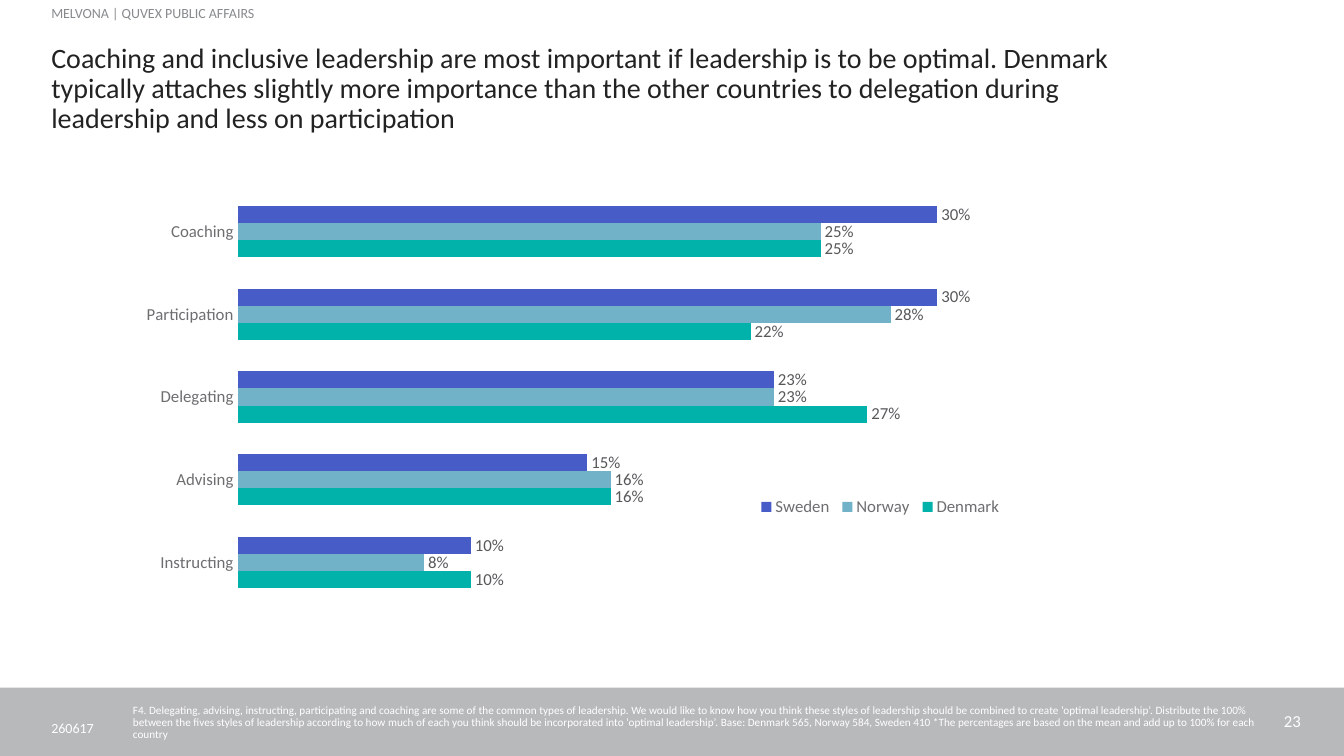
from dataclasses import dataclass

from pptx import Presentation, util as u
from pptx.chart import data
from pptx.dml import color
from pptx.enum import chart as kinds, shapes, text
from pptx.oxml import ns, xmlchemy as xml

WIDE, HIGH = u.Inches(13.33), u.Inches(7.5)
FONT = "Calibri"
COLOR = {
    "band": "B8B9BB", "white": "FFFFFF", "head": "888B8D", "title": "222223",
    "axis": "6E6E71", "label": "58585B",
    "Denmark": "00B2A9", "Norway": "71B2C9", "Sweden": "485CC7",
}
STYLES = ["Instructing", "Advising", "Delegating", "Participation", "Coaching", ""]
SHARES = {
    "Denmark": [0.10, 0.16, 0.27, 0.22, 0.25, None],
    "Norway": [0.08, 0.16, 0.23, 0.28, 0.25, None],
    "Sweden": [0.10, 0.15, 0.23, 0.30, 0.30, None],
}


@dataclass
class Box:
    """Left, top, width and height in percent of the slide's size."""
    left: float
    top: float
    width: float
    height: float

    def emu(self) -> tuple[int, ...]:
        return (round(self.left * WIDE / 100), round(self.top * HIGH / 100),
                round(self.width * WIDE / 100), round(self.height * HIGH / 100))


@dataclass
class Label:
    words: str
    box: Box
    size: int
    tint: str
    align: text.PP_ALIGN = text.PP_ALIGN.LEFT
    anchor: text.MSO_ANCHOR = text.MSO_ANCHOR.TOP
    lead: float = 1.0


BAND = Box(0, 90.97, 100, 9.03)
CHART = Box(9.15, 11.87, 72.24, 78.27)
LABELS = [
    Label("23", Box(89.05, 93.33, 8.48, 4), 12, "white", text.PP_ALIGN.RIGHT),
    Label("260617", Box(3.08, 94.53, 8.48, 3.6), 10, "white"),
    Label("MELVONA | QUVEX PUBLIC AFFAIRS", Box(3.08, 0, 20, 3.6), 10, "head"),
    Label("Coaching and inclusive leadership are most important if leadership is "
          "to be optimal. Denmark typically attaches slightly more importance than "
          "the other countries to delegation during leadership and less on "
          "participation",
          Box(3.08, 7.73, 85.67, 8.13), 20, "title",
          anchor=text.MSO_ANCHOR.MIDDLE, lead=0.9),
    Label("F4. Delegating, advising, instructing, participating and coaching are "
          "some of the common types of leadership. We would like to know how you "
          "think these styles of leadership should be combined to create ‘optimal "
          "leadership’. Distribute the 100% between the fives styles of leadership "
          "according to how much of each you think should be incorporated into "
          "‘optimal leadership’. Base: Denmark 565, Norway 584, Sweden 410 *The "
          "percentages are based on the mean and add up to 100% for each country",
          Box(9.15, 92.53, 85.15, 7.07), 8, "white", lead=0.9),
]


def tint(name: str) -> color.RGBColor:
    return color.RGBColor.from_string(COLOR[name])


def style(font, size: int, name: str) -> None:
    font.name, font.size = FONT, u.Pt(size)
    font.color.rgb = tint(name)


def add_band(slide) -> None:
    band = slide.shapes.add_shape(shapes.MSO_SHAPE.RECTANGLE, *BAND.emu())
    band.shadow.inherit = False
    band.fill.solid()
    band.fill.fore_color.rgb = tint("band")
    band.line.fill.background()


def add_label(slide, label: Label) -> None:
    frame = slide.shapes.add_textbox(*label.box.emu()).text_frame
    frame.word_wrap = True
    frame.vertical_anchor = label.anchor
    frame.text = label.words
    para = frame.paragraphs[0]
    para.alignment, para.line_spacing = label.align, label.lead
    style(para.runs[0].font, label.size, label.tint)


def place(part, index: int, fields: dict) -> None:
    """Give a chart part a manual layout, in shares of the chart."""
    for old in part.findall(ns.qn("c:layout")):
        part.remove(old)
    layout = xml.OxmlElement("c:layout")
    manual = xml.OxmlElement("c:manualLayout")
    layout.append(manual)
    for key, value in fields.items():
        field = xml.OxmlElement(f"c:{key}")
        field.set("val", str(value))
        manual.append(field)
    part.insert(index, layout)


def add_bars(slide) -> None:
    table = data.CategoryChartData(number_format="0%")
    table.categories = STYLES
    for land, values in SHARES.items():
        table.add_series(land, values)
    chart = slide.shapes.add_chart(
        kinds.XL_CHART_TYPE.BAR_CLUSTERED, *CHART.emu(), table).chart
    style(chart.font, 10, "title")
    chart.has_title = False

    cats = chart.category_axis
    cats.major_tick_mark = kinds.XL_TICK_MARK.NONE
    cats.format.line.fill.background()
    style(cats.tick_labels.font, 12, "axis")
    vals = chart.value_axis
    vals.minimum_scale, vals.maximum_scale, vals.major_unit = 0, 0.35, 0.05
    vals.has_major_gridlines = False
    vals.visible = False

    plot = chart.plots[0]
    plot.vary_by_categories = False
    plot.gap_width, plot.overlap = 182, 0
    for bars in plot.series:
        bars.format.fill.solid()
        bars.format.fill.fore_color.rgb = tint(bars.name)
        marks = bars.data_labels
        marks.show_value = True
        marks.position = kinds.XL_LABEL_POSITION.OUTSIDE_END
        marks.number_format, marks.number_format_is_linked = "0%", False
        style(marks.font, 12, "label")

    chart.has_legend = True
    chart.legend.position = kinds.XL_LEGEND_POSITION.BOTTOM
    chart.legend.include_in_layout = False
    style(chart.legend.font, 12, "axis")

    edge = {"xMode": "edge", "yMode": "edge"}
    root = chart.element
    place(root.find(".//" + ns.qn("c:plotArea")), 0,
          {"layoutTarget": "inner", **edge,
           "x": 0.118, "y": 0.03, "w": 0.841, "h": 0.839})
    place(root.find(".//" + ns.qn("c:legend")), 1,
          {**edge, "x": 0.65, "y": 0.68, "w": 0.26, "h": 0.05})


def main() -> None:
    deck = Presentation()
    deck.slide_width, deck.slide_height = WIDE, HIGH
    slide = deck.slides.add_slide(deck.slide_layouts[6])
    add_band(slide)
    add_bars(slide)
    for label in LABELS:
        add_label(slide, label)
    deck.save("out.pptx")


if __name__ == "__main__":
    main()
